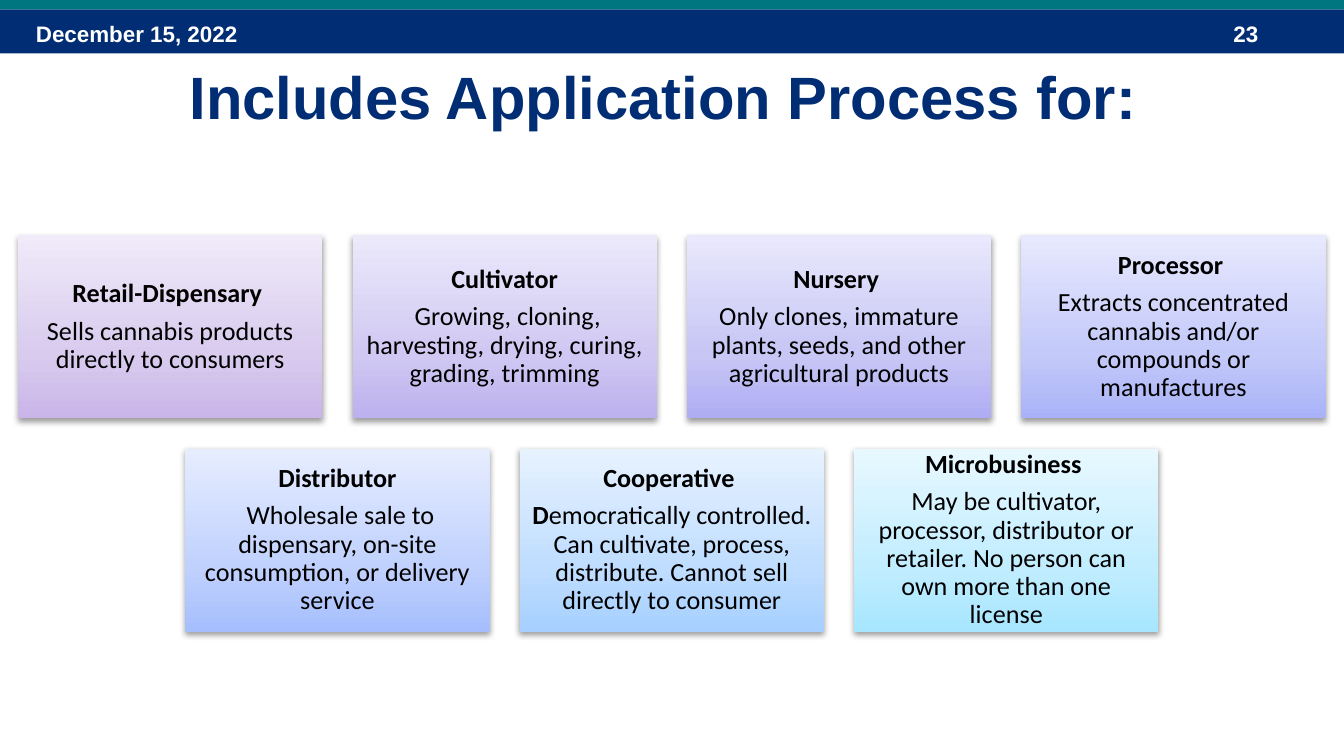
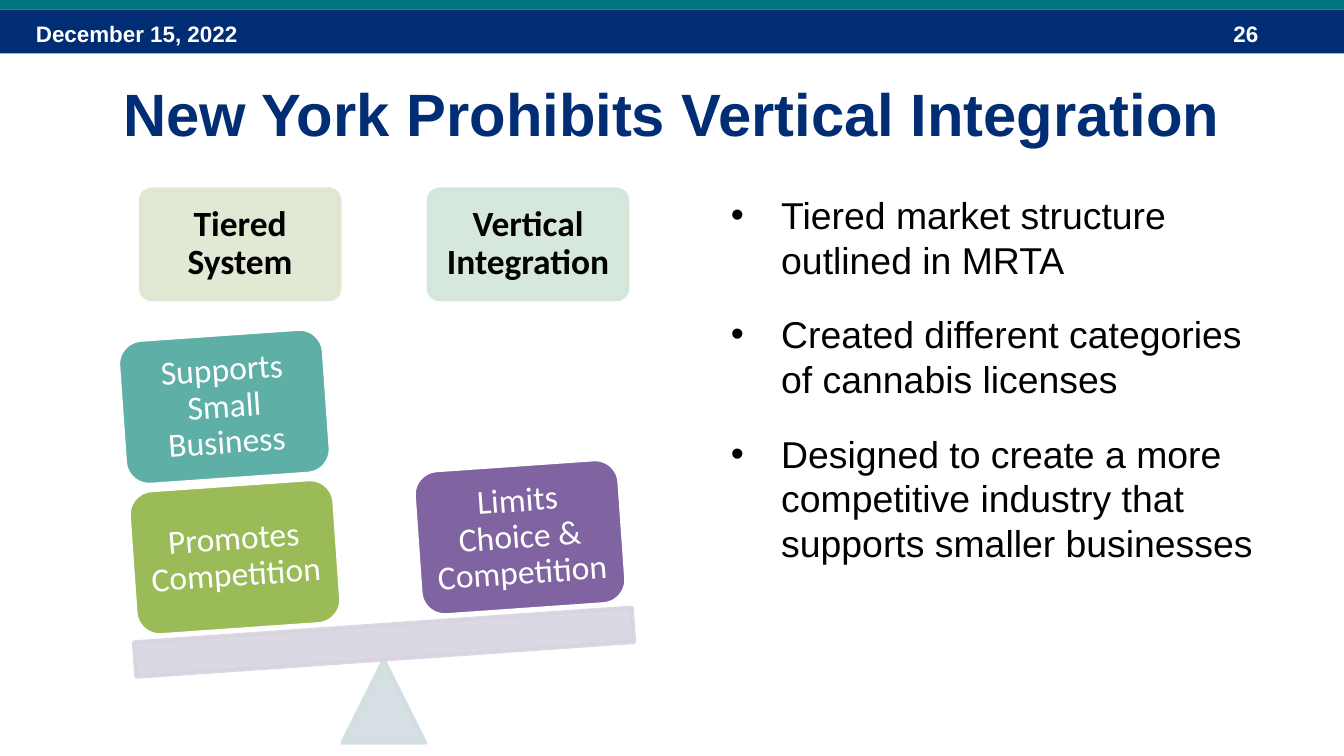
from copy import deepcopy
from dataclasses import dataclass
from math import cos, radians, sin

from lxml.etree import SubElement
from pptx import Presentation
from pptx.dml.color import RGBColor
from pptx.enum.shapes import MSO_SHAPE
from pptx.enum.text import MSO_ANCHOR, MSO_AUTO_SIZE, PP_ALIGN
from pptx.oxml.ns import qn
from pptx.util import Cm, Pt

# Shared look
SLIDE_WIDTH, SLIDE_HEIGHT = 25.4, 14.29
NAVY = RGBColor(0x00, 0x2D, 0x73)
TEAL = RGBColor(0x00, 0x76, 0x81)
WHITE = RGBColor(0xFF, 0xFF, 0xFF)
BLACK = RGBColor(0x00, 0x00, 0x00)
DATE = "December 15, 2022"
TITLE_ONLY, TITLE_AND_CONTENT = 5, 1

# Scale colours
PALE_OLIVE = RGBColor(0xDE, 0xE7, 0xD1)
PALE_GREEN = RGBColor(0xD2, 0xE5, 0xD9)
PALE_BLUE = RGBColor(0xD2, 0xDC, 0xE2)
PALE_PURPLE = RGBColor(0xD8, 0xD3, 0xE0)
GREEN = RGBColor(0x9B, 0xBB, 0x59)
SEA_GREEN = RGBColor(0x5E, 0xAF, 0xA6)
PURPLE = RGBColor(0x80, 0x64, 0xA2)

# Tile gradients, from the bottom edge up
GRADIENT_POSITIONS = (0, 0.35, 1)
TILE_GRADIENTS = [
    [RGBColor.from_string(code) for code in codes.split()]
    for codes in (
        "C9B5E8 D8CBEE F0EAF9",
        "BCB1EE D0C8F2 ECE9FB",
        "AFADF3 C7C6F5 E9E8FC",
        "A9B2F8 C3C9F9 E7E9FE",
        "A5BEFD C0D1FD E6EDFF",
        "A6D0FF BFDDFF E7F2FF",
        "A7E6FF C1EDFF E7F8FF",
    )
]

# License name, then (text, bold) runs of its description
LICENSES = [
    ("Retail-Dispensary ", [("Sells cannabis products directly to consumers", False)]),
    ("Cultivator", [(" Growing, cloning, harvesting, drying, curing, grading, trimming", False)]),
    ("Nursery ", [("Only clones, immature plants, seeds, and other agricultural products", False)]),
    ("Processor ", [("Extracts concentrated cannabis and/or compounds or manufactures", False)]),
    ("Distributor", [(" Wholesale sale to dispensary, on-site consumption, or delivery service", False)]),
    ("Cooperative ", [
        ("D", True),
        ("emocratically controlled. Can cultivate, process, distribute. "
         "Cannot sell directly to consumer", False),
    ]),
    ("Microbusiness ", [
        ("May be cultivator, processor, distributor or retailer. "
         "No person can own more than one license", False),
    ]),
]

MARKET_POINTS = [
    "Tiered market structure outlined in MRTA",
    "Created different categories of cannabis licenses",
    "Designed to create a more competitive industry that supports smaller businesses",
]


@dataclass
class Box:
    """A region in centimetres."""
    left: float
    top: float
    width: float
    height: float

    def lengths(self):
        return Cm(self.left), Cm(self.top), Cm(self.width), Cm(self.height)


def add_run(paragraph, text, size, color, bold=False, font="Arial"):
    run = paragraph.add_run()
    run.text = text
    run.font.name = font
    run.font.size = Pt(size)
    run.font.bold = bold
    run.font.color.rgb = color


def add_plain_shape(slide, kind, box, color=None, line=None):
    shape = slide.shapes.add_shape(kind, *box.lengths())
    shape.shadow.inherit = False
    if color is not None:
        shape.fill.solid()
        shape.fill.fore_color.rgb = color
    if line is None:
        shape.line.fill.background()
    else:
        shape.line.color.rgb = line
        shape.line.width = Pt(2)
    return shape


def set_opacity(shape, percent):
    for color in shape.element.spPr.iter(qn("a:srgbClr")):
        SubElement(color, qn("a:alpha"), val=str(percent * 1000))


def prepare_text(shape, inset):
    frame = shape.text_frame
    frame.word_wrap = True
    frame.vertical_anchor = MSO_ANCHOR.MIDDLE
    frame.margin_left = frame.margin_right = Cm(inset)
    frame.margin_top = frame.margin_bottom = Cm(inset)
    return frame


def format_centered(paragraph):
    paragraph.alignment = PP_ALIGN.CENTER
    paragraph.line_spacing = 0.9
    paragraph.space_after = Pt(5)


def place(shape, box):
    shape.left, shape.top, shape.width, shape.height = box.lengths()
    shape.text_frame.auto_size = MSO_AUTO_SIZE.NONE


# Header band with date and page number
def add_header(slide, page):
    add_plain_shape(slide, MSO_SHAPE.RECTANGLE, Box(0, 0.18, SLIDE_WIDTH, 0.83), NAVY)
    add_plain_shape(slide, MSO_SHAPE.RECTANGLE, Box(0, -0.05, SLIDE_WIDTH, 0.23), TEAL)
    for text, left, width in ((DATE, 0.43, 5.92), (str(page), 23.06, 1.9)):
        text_box = slide.shapes.add_textbox(*Box(left, 0.25, width, 0.76).lengths())
        text_box.text_frame.word_wrap = True
        add_run(text_box.text_frame.paragraphs[0], text, 12, WHITE, bold=True)


def add_titled_slide(presentation, layout, page, title, title_box):
    slide = presentation.slides.add_slide(presentation.slide_layouts[layout])
    add_header(slide, page)
    place(slide.shapes.title, title_box)
    frame = slide.shapes.title.text_frame
    frame.vertical_anchor = MSO_ANCHOR.MIDDLE
    frame.paragraphs[0].alignment = PP_ALIGN.CENTER
    add_run(frame.paragraphs[0], title, 32, NAVY, bold=True)
    return slide


# License tiles
def fill_gradient(shape, colors):
    shape.fill.gradient()
    shape.fill.gradient_angle = 90
    stop_list = shape.element.spPr.find(".//" + qn("a:gsLst"))
    stop_list.insert(1, deepcopy(stop_list[0]))
    for stop, position, color in zip(shape.fill.gradient_stops, GRADIENT_POSITIONS, colors):
        stop.position = position
        stop.color.rgb = color


def add_drop_shadow(shape):
    effects = shape.element.spPr.find(qn("a:effectLst"))
    shadow = SubElement(effects, qn("a:outerShdw"), blurRad="40000", dist="20000",
                        dir="5400000", rotWithShape="0")
    color = SubElement(shadow, qn("a:srgbClr"), val="000000")
    SubElement(color, qn("a:alpha"), val="38000")


def add_license_tile(slide, box, name, description, gradient):
    tile = add_plain_shape(slide, MSO_SHAPE.RECTANGLE, box)
    fill_gradient(tile, gradient)
    add_drop_shadow(tile)
    frame = prepare_text(tile, 0.15)
    for runs in ([(name, True)], description):
        first = runs is not description
        paragraph = frame.paragraphs[0] if first else frame.add_paragraph()
        format_centered(paragraph)
        for text, bold in runs:
            add_run(paragraph, text, 14, BLACK, bold, "Calibri")


def add_license_tiles(slide, box, columns=4, width=5.75, height=3.46, gap=0.57):
    for index, ((name, description), gradient) in enumerate(zip(LICENSES, TILE_GRADIENTS)):
        row, column = divmod(index, columns)
        count = min(columns, len(LICENSES) - row * columns)
        row_width = count * (width + gap) - gap
        left = box.left + (box.width - row_width) / 2 + column * (width + gap)
        top = box.top + row * (height + gap)
        add_license_tile(slide, Box(left, top, width, height), name, description, gradient)


# Tilted scale
def add_label(shape, text, size, color, inset, bold=False):
    paragraph = prepare_text(shape, inset).paragraphs[0]
    format_centered(paragraph)
    add_run(paragraph, text, size, color, bold, "Calibri")


def add_scale(slide, box, tilt=4):
    middle = box.left + box.width / 2

    # Headings
    headings = (("Tiered System", PALE_OLIVE, -1), ("Vertical Integration", PALE_GREEN, 1))
    for text, color, side in headings:
        heading_box = Box(middle + side * 2.72 - 1.88, box.top, 3.76, 2.08)
        heading = add_plain_shape(slide, MSO_SHAPE.ROUNDED_RECTANGLE, heading_box, color, color)
        heading.adjustments[0] = 0.1
        set_opacity(heading, 90)
        add_label(heading, text, 19, BLACK, 0.2, bold=True)

    # Pivot and plank
    pivot_top = box.top + box.height - 1.57
    pivot_box = Box(middle - 0.79, pivot_top, 1.57, 1.57)
    plank_box = Box(box.left, pivot_top - 0.66, box.width, 0.66)
    pivot = add_plain_shape(slide, MSO_SHAPE.ISOSCELES_TRIANGLE, pivot_box, PALE_BLUE, PALE_BLUE)
    plank = add_plain_shape(slide, MSO_SHAPE.RECTANGLE, plank_box, PALE_PURPLE, PALE_PURPLE)
    plank.rotation = -tilt
    for part in (pivot, plank):
        set_opacity(part, 90)

    # Blocks stand on the plank: side of the pivot, level in the stack
    blocks = (
        ("Promotes Competition", GREEN, -1, 0),
        ("Supports Small Business", SEA_GREEN, -1, 1),
        ("Limits Choice & Competition", PURPLE, 1, 0),
    )
    width, height = 3.89, 2.74
    sine, cosine = sin(radians(tilt)), cos(radians(tilt))
    for text, color, side, level in blocks:
        along, up = side * 2.7, 1.8 + level * 2.85
        center_x = middle + along * cosine - up * sine
        center_y = pivot_top - 0.33 - along * sine - up * cosine
        block_box = Box(center_x - width / 2, center_y - height / 2, width, height)
        block = add_plain_shape(slide, MSO_SHAPE.ROUNDED_RECTANGLE, block_box, color, WHITE)
        block.rotation = -tilt
        add_label(block, text, 18, WHITE, 0.18)


# Bulleted list
def add_bullets(slide, box, points):
    body = slide.placeholders[1]
    place(body, box)
    for index, text in enumerate(points):
        frame = body.text_frame
        paragraph = frame.add_paragraph() if index else frame.paragraphs[0]
        properties = paragraph._p.get_or_add_pPr()
        properties.set("marL", str(Cm(0.95)))
        properties.set("indent", str(-Cm(0.95)))
        SubElement(properties, qn("a:buFont"), typeface="Arial")
        SubElement(properties, qn("a:buChar"), char="•")
        paragraph.space_before = Pt(4 if index else 0)
        paragraph.space_after = Pt(12)
        add_run(paragraph, text, 20, BLACK)


def build_license_slide(presentation):
    slide = add_titled_slide(presentation, TITLE_ONLY, 23, "Includes Application Process for: ",
                             Box(0, 1, SLIDE_WIDTH, 1.63))
    add_license_tiles(slide, Box(0, 4.45, SLIDE_WIDTH, 7.49))


def build_integration_slide(presentation):
    slide = add_titled_slide(presentation, TITLE_AND_CONTENT, 26,
                             "New York Prohibits Vertical Integration",
                             Box(0, 1.07, SLIDE_WIDTH, 2.11))
    add_bullets(slide, Box(13.56, 3.5, 10.74, 9.17), MARKET_POINTS)
    add_scale(slide, Box(2.54, 3.58, 9.44, 10.46))


def main():
    presentation = Presentation()
    presentation.slide_width, presentation.slide_height = Cm(SLIDE_WIDTH), Cm(SLIDE_HEIGHT)
    build_license_slide(presentation)
    build_integration_slide(presentation)
    presentation.save("out.pptx")


if __name__ == "__main__":
    main()
